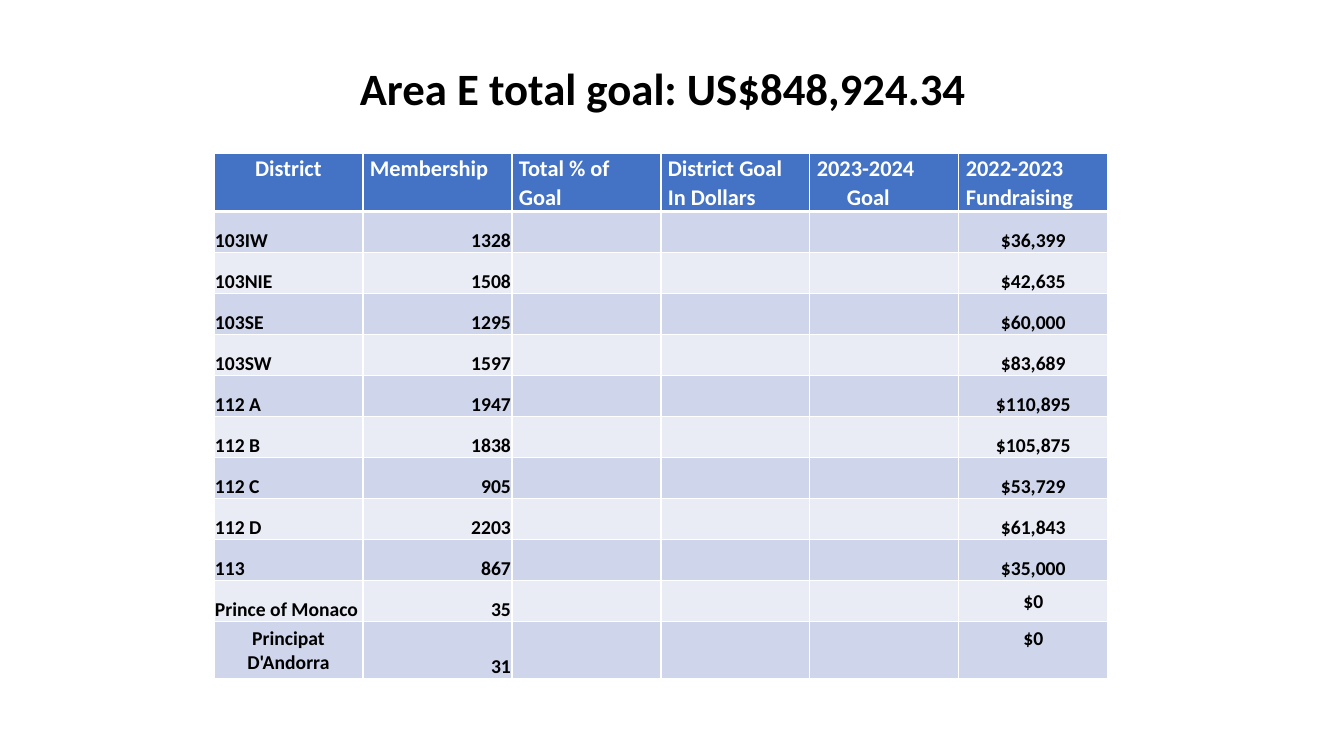
from dataclasses import dataclass

import pptx
import pptx.dml.color
import pptx.enum.text
import pptx.oxml
import pptx.oxml.ns
import pptx.util

SCALE = 914400 / 100.8  # EMU in one px
ALIGN = pptx.enum.text.PP_ALIGN
ANCHOR = pptx.enum.text.MSO_ANCHOR


@dataclass(frozen=True)
class Theme:
    font: str = "Calibri"
    ink: str = "000000"
    white: str = "FFFFFF"
    head: str = "4472C4"
    bands: tuple[str, str] = ("CFD5EA", "E9EBF5")
    title: int = 32
    label: int = 16
    body: int = 14
    thin: int = 1
    thick: int = 3


@dataclass(frozen=True)
class Look:
    size: int
    color: str
    align: ALIGN = ALIGN.LEFT
    anchor: ANCHOR = ANCHOR.BOTTOM
    side: int = 1
    top: int = 1
    spacing: float = 1.0


@dataclass(frozen=True)
class Area:
    name: str
    members: int
    raised: str


THEME = Theme()
HEADS = [
    ["District"],
    ["Membership"],
    ["Total % of Goal"],
    ["District Goal In Dollars"],
    ["2023-2024", "Goal"],
    ["2022-2023", "Fundraising"],
]
AREAS = [
    Area("103IW", 1328, "$36,399"),
    Area("103NIE", 1508, "$42,635"),
    Area("103SE", 1295, "$60,000"),
    Area("103SW", 1597, "$83,689"),
    Area("112 A", 1947, "$110,895"),
    Area("112 B", 1838, "$105,875"),
    Area("112 C", 905, "$53,729"),
    Area("112 D", 2203, "$61,843"),
    Area("113", 867, "$35,000"),
    Area("Prince of Monaco", 35, "$0"),
    Area("Principat D'Andorra", 31, "$0"),
]
GOAL_COL, RAISED_COL = 4, 5
COL_W, ROW_H, TALL_H = 149, 41, 57


def px(count: int) -> pptx.util.Emu:
    return pptx.util.Emu(round(count * SCALE))


def rgb(code: str) -> pptx.dml.color.RGBColor:
    return pptx.dml.color.RGBColor.from_string(code)


def write(frame, lines: list[str], look: Look) -> None:
    for index, line in enumerate(lines):
        para = frame.paragraphs[0] if index == 0 else frame.add_paragraph()
        para.alignment = look.align
        para.line_spacing = look.spacing
        run = para.add_run()
        run.text = line
        run.font.name = THEME.font
        run.font.size = pptx.util.Pt(look.size)
        run.font.bold = True
        run.font.color.rgb = rgb(look.color)


def fill_cell(cell, lines: list[str], look: Look) -> None:
    cell.margin_left = cell.margin_right = px(look.side)
    cell.margin_top, cell.margin_bottom = px(look.top), 0
    cell.vertical_anchor = look.anchor
    write(cell.text_frame, lines, look)


def paint(cell, color: str, top: int, bottom: int) -> None:
    """Draw the cell's borders, then its fill."""
    props = cell._tc.get_or_add_tcPr()
    widths = {"lnL": THEME.thin, "lnR": THEME.thin, "lnT": top, "lnB": bottom}
    for tag, width in widths.items():
        props.append(pptx.oxml.parse_xml(
            f'<a:{tag} {pptx.oxml.ns.nsdecls("a")} w="{pptx.util.Pt(width)}">'
            f'<a:solidFill><a:srgbClr val="{THEME.white}"/></a:solidFill></a:{tag}>'
        ))
    cell.fill.solid()
    cell.fill.fore_color.rgb = rgb(color)


def add_title(slide) -> None:
    title = slide.shapes.title
    title.left, title.top, title.width, title.height = map(px, (327, 52, 672, 66))
    frame = title.text_frame
    frame.word_wrap = True
    frame.auto_size = pptx.enum.text.MSO_AUTO_SIZE.NONE
    frame.vertical_anchor = ANCHOR.TOP
    look = Look(THEME.title, THEME.ink, ALIGN.CENTER, spacing=1.07)
    write(frame, ["Area E total goal: US$848,924.34"], look)


def add_grid(slide) -> None:
    rows, cols = len(AREAS) + 1, len(HEADS)
    height = 2 * TALL_H + (rows - 2) * ROW_H
    table = slide.shapes.add_table(
        rows, cols, px(214), px(153), px(cols * COL_W), px(height)
    ).table
    for col in table.columns:
        col.width = px(COL_W)
    for index, row in enumerate(table.rows):
        row.height = px(TALL_H if index in (0, rows - 1) else ROW_H)

    # Borders and bands
    for index in range(rows):
        color = THEME.bands[(index - 1) % 2] if index else THEME.head
        top = THEME.thick if index == 1 else THEME.thin
        bottom = THEME.thick if index == 0 else THEME.thin
        for col in range(cols):
            paint(table.cell(index, col), color, top, bottom)

    # Header row
    for col, lines in enumerate(HEADS):
        align = ALIGN.LEFT if col else ALIGN.CENTER
        look = Look(THEME.label, THEME.white, align, ANCHOR.TOP, 7, 0, 1.07)
        fill_cell(table.cell(0, col), lines, look)
    goal = table.cell(0, GOAL_COL).text_frame.paragraphs[1]
    goal._p.get_or_add_pPr().set("marL", str(px(30)))

    # District rows
    left = Look(THEME.body, THEME.ink)
    right = Look(THEME.body, THEME.ink, ALIGN.RIGHT)
    center = Look(THEME.body, THEME.ink, ALIGN.CENTER)
    middle = Look(THEME.body, THEME.ink, ALIGN.CENTER, ANCHOR.MIDDLE)
    upper = Look(THEME.body, THEME.ink, ALIGN.CENTER, ANCHOR.TOP, 10, 5)
    last = len(AREAS)
    for index, area in enumerate(AREAS, 1):
        name = middle if index == last else left
        raised = {last - 1: middle, last: upper}.get(index, center)
        fill_cell(table.cell(index, 0), [area.name], name)
        fill_cell(table.cell(index, 1), [str(area.members)], right)
        fill_cell(table.cell(index, RAISED_COL), [area.raised], raised)


def main() -> None:
    deck = pptx.Presentation()
    deck.slide_width, deck.slide_height = px(1344), px(756)
    slide = deck.slides.add_slide(deck.slide_layouts[5])
    add_title(slide)
    add_grid(slide)
    deck.save("out.pptx")


if __name__ == "__main__":
    main()
